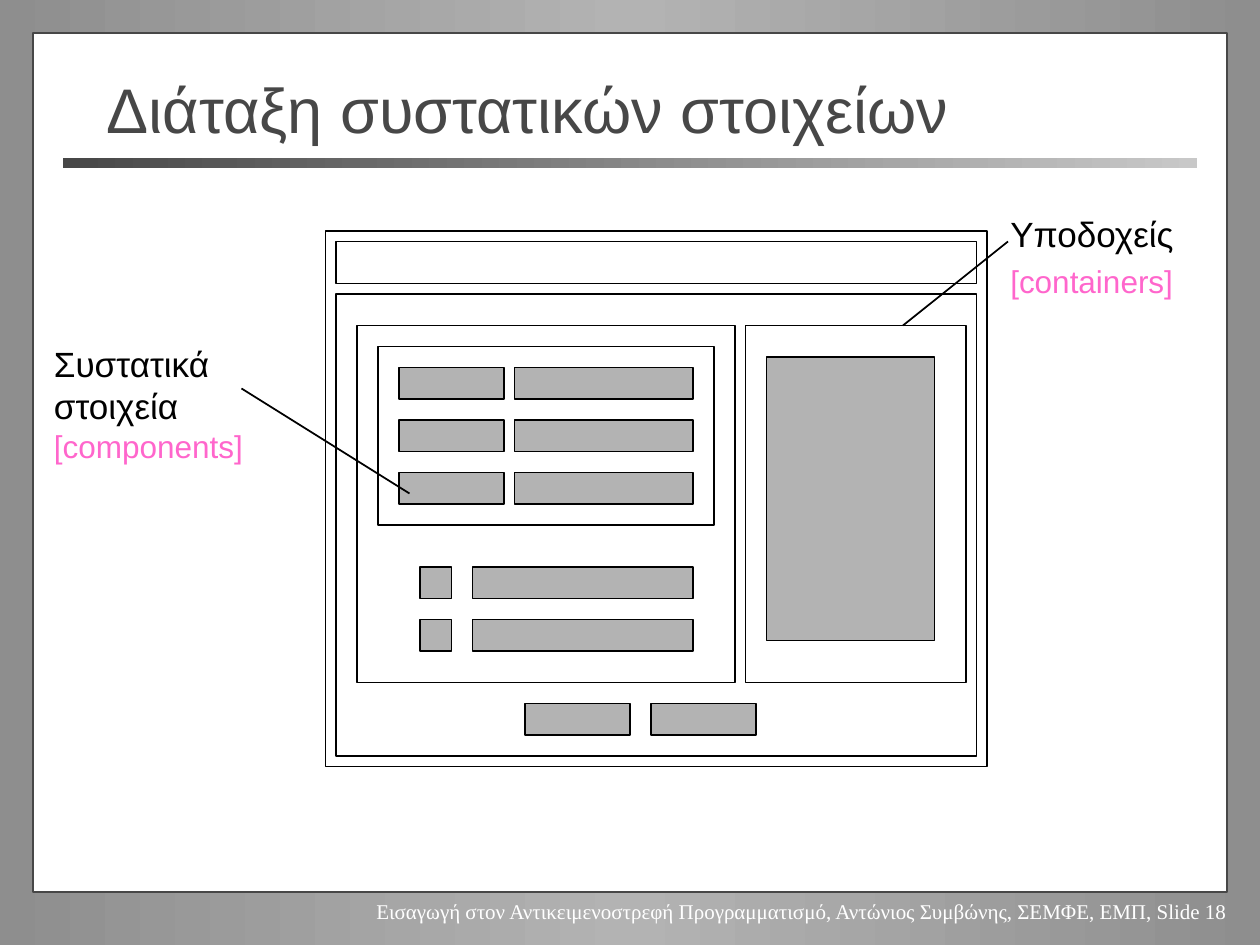
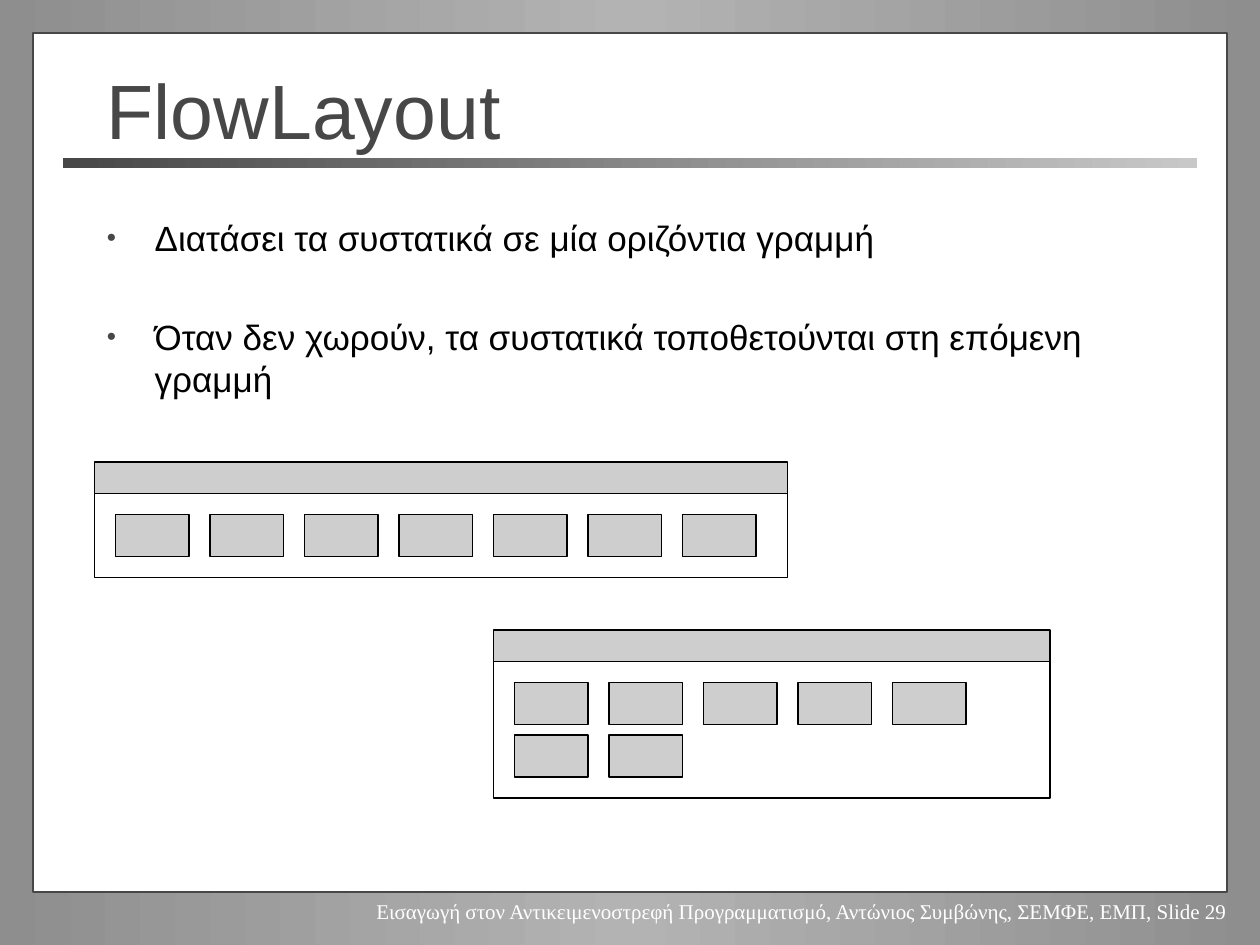
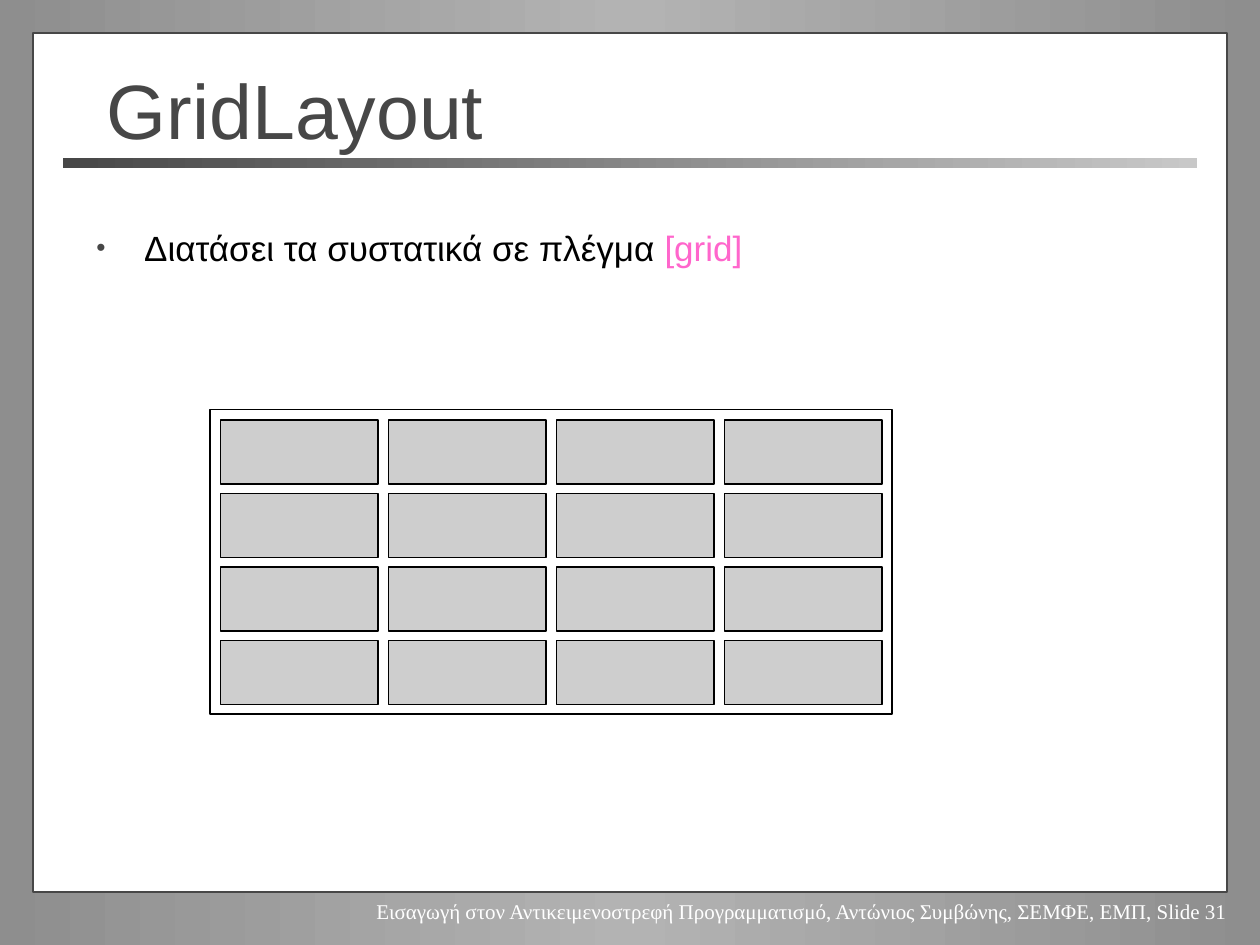
from copy import deepcopy
from dataclasses import dataclass

from lxml import etree
from pptx import Presentation
from pptx.dml.color import RGBColor
from pptx.enum.shapes import MSO_CONNECTOR, MSO_SHAPE
from pptx.enum.text import MSO_ANCHOR, PP_ALIGN
from pptx.oxml.ns import qn
from pptx.util import Inches, Pt

RECTANGLE = MSO_SHAPE.RECTANGLE
STRAIGHT = MSO_CONNECTOR.STRAIGHT
TOP, MIDDLE = MSO_ANCHOR.TOP, MSO_ANCHOR.MIDDLE
LEFT, RIGHT = PP_ALIGN.LEFT, PP_ALIGN.RIGHT


@dataclass(frozen=True)
class Theme:
    font: str = "Arial"
    footer_font: str = "Times New Roman"
    ink: str = "000000"
    dark: str = "474747"
    paper: str = "FFFFFF"
    accent: str = "FF66CC"
    component: str = "B3B3B3"
    button: str = "CECECE"
    backdrop: tuple = ("8E8E8E", "B3B3B3", "8E8E8E")
    rule: tuple = ("474747", "C8C8C8")
    title_long: int = 36
    title: int = 44
    body: int = 20
    term: int = 18
    footer: int = 12
    line: int = 1
    space: int = 4
    section_space: int = 33
    indent: float = 0.38


THEME = Theme()
WIDTH, HEIGHT = 10, 7.5
UNITS_PER_INCH = 12

FOOTER = ("Εισαγωγή στον Αντικειμενοστρεφή Προγραμματισμό, "
          "Αντώνιος Συμβώνης, ΣΕΜΦΕ, ΕΜΠ, Slide {}")

CONTAINERS = [
    (31, 22, 63, 51),
    (32, 23, 61, 4),
    (32, 28, 61, 44),
    (34, 31, 36, 34),
    (71, 31, 21, 34),
    (36, 33, 32, 17),
]
COMPONENT_ROWS = [
    ((35, 40, 45), ((38, 10), (49, 17))),
    ((54, 59), ((40, 3), (45, 21))),
    ((67,), ((50, 10), (62, 10))),
]
ROW_HEIGHT = 3
TEXT_AREA = (73, 34, 16, 27)
POINTERS = [((96, 23), (86, 31)), ((23, 37), (39, 47))]
CONTAINERS_LABEL = [
    [("Υποδοχείς", THEME.body, THEME.ink)],
    [("[containers]", THEME.term, THEME.accent)],
]
COMPONENTS_LABEL = [[
    ("Συστατικά στοιχεία ", THEME.body, THEME.ink),
    ("[components]", THEME.term, THEME.accent),
]]

FLOW_POINTS = [
    [("Διατάσει τα συστατικά σε μία οριζόντια γραμμή", THEME.body, THEME.ink)],
    [("Όταν δεν χωρούν, τα συστατικά τοποθετούνται στη επόμενη γραμμή",
      THEME.body, THEME.ink)],
]
FLOW_WINDOWS = [(9, 44, 66, 8), (47, 60, 53, 13)]
FLOW_BUTTONS = 7
BUTTON_WIDTH, BUTTON_HEIGHT = 7, 4
BUTTON_GAP, BUTTON_ROW_GAP = 2, 1
TITLE_BAR = 3

GRID_POINTS = [[
    ("Διατάσει τα συστατικά σε πλέγμα ", THEME.body, THEME.ink),
    ("[grid]", THEME.body, THEME.accent),
]]
GRID_FRAME = (20, 39, 65, 29)
GRID_SIZE = 4
CELL_WIDTH, CELL_HEIGHT = 15, 6.1
CELL_STEP_X, CELL_STEP_Y = 16, 7


def rgb(value):
    return RGBColor.from_string(value)


def units(*lengths):
    return [length / UNITS_PER_INCH for length in lengths]


def set_gradient(fill, element, colors):
    fill.gradient()
    fill.gradient_angle = 0
    stops = element.find(".//" + qn("a:gsLst"))
    while len(stops) < len(colors):
        stops.append(deepcopy(stops[0]))
    for index, (stop, color) in enumerate(zip(fill.gradient_stops, colors)):
        stop.color.rgb = rgb(color)
        stop.position = index / (len(colors) - 1)


def add_box(page, area, fill=None, line=THEME.ink):
    box = page.shapes.add_shape(RECTANGLE, *map(Inches, area))
    box.shadow.inherit = False
    if fill:
        box.fill.solid()
        box.fill.fore_color.rgb = rgb(fill)
    else:
        box.fill.background()
    if line:
        box.line.color.rgb = rgb(line)
        box.line.width = Pt(THEME.line)
    else:
        box.line.fill.background()
    return box


def add_unit_box(page, area, fill=None):
    return add_box(page, units(*area), fill)


def add_bullet(para):
    properties = para._p.get_or_add_pPr()
    properties.set("marL", str(Inches(THEME.indent)))
    properties.set("indent", str(-Inches(THEME.indent)))
    color = etree.SubElement(properties, qn("a:buClr"))
    etree.SubElement(color, qn("a:srgbClr")).set("val", THEME.dark)
    etree.SubElement(properties, qn("a:buSzPct")).set("val", "75000")
    etree.SubElement(properties, qn("a:buFont")).set("typeface", THEME.font)
    etree.SubElement(properties, qn("a:buChar")).set("char", "•")


def write(box, paragraphs, font=THEME.font, align=LEFT, anchor=TOP,
          wrap=True, space=0, bullets=False):
    frame = box.text_frame
    frame.word_wrap = wrap
    frame.vertical_anchor = anchor
    for index, spans in enumerate(paragraphs):
        para = frame.add_paragraph() if index else frame.paragraphs[0]
        para.alignment = align
        para.space_before = Pt(
            THEME.section_space if bullets and index else space)
        if bullets:
            add_bullet(para)
        for text, size, color in spans:
            span = para.add_run()
            span.text = text
            span.font.name = font
            span.font.size = Pt(size)
            span.font.color.rgb = rgb(color)


def add_text(page, area, paragraphs, **style):
    box = page.shapes.add_textbox(*map(Inches, area))
    write(box, paragraphs, **style)


def add_points(page, area, points):
    box = add_box(page, units(*area), THEME.paper, None)
    write(box, points, space=THEME.space, bullets=True)


def add_pointer(page, start, end):
    pointer = page.shapes.add_connector(
        STRAIGHT, *map(Inches, units(*start, *end)))
    pointer.line.color.rgb = rgb(THEME.ink)
    pointer.line.width = Pt(THEME.line)
    etree.SubElement(pointer._element.spPr, qn("a:effectLst"))


def add_page(deck, title, title_size, number):
    page = deck.slides.add_slide(deck.slide_layouts[6])
    set_gradient(page.background.fill, page._element, THEME.backdrop)
    margin = 0.26
    add_box(page, (margin, margin, WIDTH - 2 * margin, 6.82),
            THEME.paper, THEME.dark)
    rule = add_box(page, (0.5, 1.25, WIDTH - 1, 0.08), line=None)
    set_gradient(rule.fill, rule._element, THEME.rule)
    add_text(page, (2.5, 7.08, 7.34, 0.3),
             [[(FOOTER.format(number), THEME.footer, THEME.paper)]],
             font=THEME.footer_font, align=RIGHT, wrap=False)
    add_text(page, (0.75, 0.55, WIDTH - 1.5, 0.62),
             [[(title, title_size, THEME.dark)]], anchor=MIDDLE)
    return page


def build_components(deck):
    page = add_page(deck, "Διάταξη συστατικών στοιχείων",
                    THEME.title_long, 18)
    for area in CONTAINERS:
        add_unit_box(page, area)
    for tops, columns in COMPONENT_ROWS:
        for top in tops:
            for left, width in columns:
                add_unit_box(page, (left, top, width, ROW_HEIGHT),
                             THEME.component)
    add_unit_box(page, TEXT_AREA, THEME.component)
    add_text(page, (7.92, 1.64, 1.5, 0.79), CONTAINERS_LABEL,
             wrap=False, space=THEME.space)
    add_text(page, (0.33, 2.67, 2.02, 1.06), COMPONENTS_LABEL,
             space=THEME.space)
    for start, end in POINTERS:
        add_pointer(page, start, end)


def build_flow(deck):
    page = add_page(deck, "FlowLayout", THEME.title, 29)
    add_points(page, (9, 20, 103, 28), FLOW_POINTS)
    step_x = BUTTON_WIDTH + BUTTON_GAP
    step_y = BUTTON_HEIGHT + BUTTON_ROW_GAP
    for left, top, width, height in FLOW_WINDOWS:
        content_top = top + TITLE_BAR
        add_unit_box(page, (left, content_top, width, height))
        add_unit_box(page, (left, top, width, TITLE_BAR), THEME.button)
        per_row = (width - BUTTON_GAP) // step_x
        for index in range(FLOW_BUTTONS):
            row, column = divmod(index, per_row)
            add_unit_box(page, (left + BUTTON_GAP + column * step_x,
                                content_top + BUTTON_GAP + row * step_y,
                                BUTTON_WIDTH, BUTTON_HEIGHT), THEME.button)


def build_grid(deck):
    page = add_page(deck, "GridLayout", THEME.title, 31)
    add_points(page, (8, 21, 102, 14), GRID_POINTS)
    add_unit_box(page, GRID_FRAME)
    left, top = GRID_FRAME[:2]
    for row in range(GRID_SIZE):
        for column in range(GRID_SIZE):
            add_unit_box(page, (left + 1 + column * CELL_STEP_X,
                                top + 1 + row * CELL_STEP_Y,
                                CELL_WIDTH, CELL_HEIGHT), THEME.button)


def main():
    deck = Presentation()
    deck.slide_width, deck.slide_height = Inches(WIDTH), Inches(HEIGHT)
    build_components(deck)
    build_flow(deck)
    build_grid(deck)
    deck.save("out.pptx")


if __name__ == "__main__":
    main()
